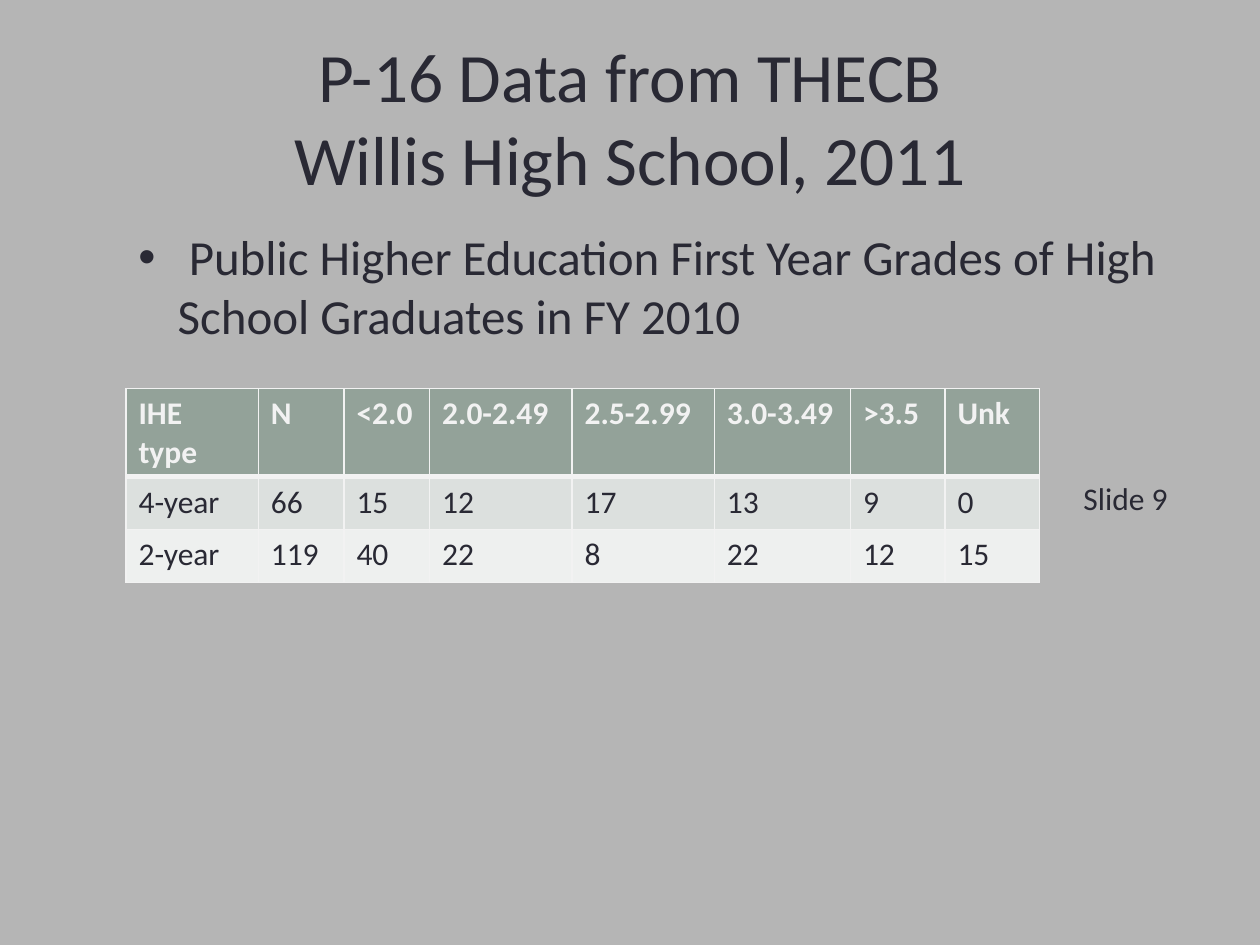
from lxml.etree import SubElement
from pptx import Presentation
from pptx.dml.color import RGBColor as RGB
from pptx.enum.text import MSO_ANCHOR as ANCHOR, MSO_AUTO_SIZE as AUTO, PP_ALIGN as ALIGN
from pptx.oxml.ns import qn
from pptx.util import Pt

COLORS = {"back": "B5B5B5", "text": "292934", "light": "F2F2F2",
          "header": "93A299", "band": "DCE0DE", "plain": "EEF0EF"}
COL_WIDTHS = [75.6, 48.96, 48.96, 81.36, 81.36, 77.76, 54, 54]
ROW_HEIGHTS = [43.92, 30.24, 30.24]
GRADES = [
    ["IHE type", "N", "<2.0", "2.0-2.49", "2.5-2.99", "3.0-3.49", ">3.5", "Unk"],
    ["4-year", "66", "15", "12", "17", "13", "9", "0"],
    ["2-year", "119", "40", "22", "8", "22", "12", "15"],
]


def rgb(name):
    """Return the named colour."""
    return RGB.from_string(COLORS[name])


def write(tf, text, size=18, color="text", bold=False, align=ALIGN.LEFT, bullet=None):
    """Write one formatted paragraph into a text frame."""
    tf.word_wrap = True
    p = tf.paragraphs[0]
    p.text = text
    p.alignment = align
    if bullet:
        pPr = p._p.get_or_add_pPr()
        pPr.set("marL", str(Pt(58.5)))
        pPr.set("indent", str(Pt(-22.5)))
        SubElement(pPr, qn("a:buFont"), typeface="Arial")
        SubElement(pPr, qn("a:buChar"), char=bullet)
    for r in p.runs:
        r.font.name = "Calibri"
        r.font.size = Pt(size)
        r.font.bold = bold
        r.font.color.rgb = rgb(color)


def add_title(s, text):
    """Place and format the title placeholder."""
    sp = s.shapes.title
    sp.left, sp.top, sp.width, sp.height = Pt(36), Pt(21.6), Pt(648), Pt(90)
    tf = sp.text_frame
    tf.auto_size = AUTO.NONE
    tf.vertical_anchor = ANCHOR.MIDDLE
    write(tf, text, size=39.6, align=ALIGN.CENTER)


def add_text(s, x, y, w, h, text, **fmt):
    """Add a text box."""
    write(s.shapes.add_textbox(Pt(x), Pt(y), Pt(w), Pt(h)).text_frame, text, **fmt)


def add_border(cell, side, width):
    """Draw one side of a cell's border."""
    ln = SubElement(cell._tc.get_or_add_tcPr(), qn(f"a:ln{side}"), w=str(Pt(width)))
    SubElement(SubElement(ln, qn("a:solidFill")), qn("a:srgbClr"), val=COLORS["light"])


def add_grades(s, x, y):
    """Add the table of first year grades."""
    table = s.shapes.add_table(len(GRADES), len(COL_WIDTHS), Pt(x), Pt(y),
                               Pt(sum(COL_WIDTHS)), Pt(sum(ROW_HEIGHTS))).table
    for col, width in zip(table.columns, COL_WIDTHS):
        col.width = Pt(width)
    for i, (row, height) in enumerate(zip(table.rows, ROW_HEIGHTS)):
        row.height = Pt(height)
        head = i == 0
        for cell, text in zip(row.cells, GRADES[i]):
            write(cell.text_frame, text, bold=head, color="light" if head else "text")
            for side in "LRTB":
                thick = (head and side == "B") or (i == 1 and side == "T")
                add_border(cell, side, 3 if thick else 1)
            cell.fill.solid()
            cell.fill.fore_color.rgb = rgb(["header", "band", "plain"][i])


def main():
    """Build the slide and save it."""
    prs = Presentation()
    prs.slide_width, prs.slide_height = Pt(720), Pt(540)
    s = prs.slides.add_slide(prs.slide_layouts[5])
    s.background.fill.solid()
    s.background.fill.fore_color.rgb = rgb("back")
    add_title(s, "P-16 Data from THECB\vWillis High School, 2011")
    add_text(s, 36, 126, 648, 356.4,
             " Public Higher Education First Year Grades of High School Graduates in FY 2010",
             size=28, bullet="•")
    add_grades(s, 72, 222)
    add_text(s, 612, 270, 66.24, 28.8, "Slide 9")
    prs.save("out.pptx")


if __name__ == "__main__":
    main()
